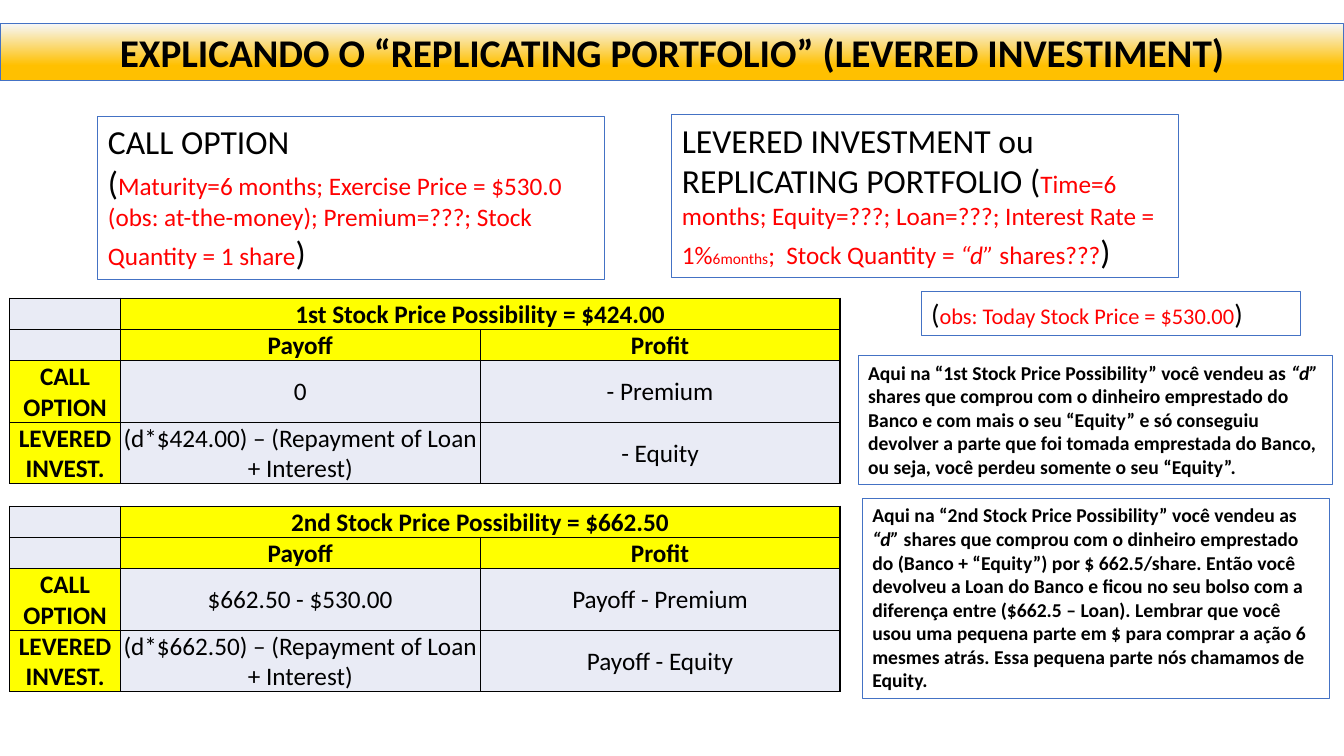
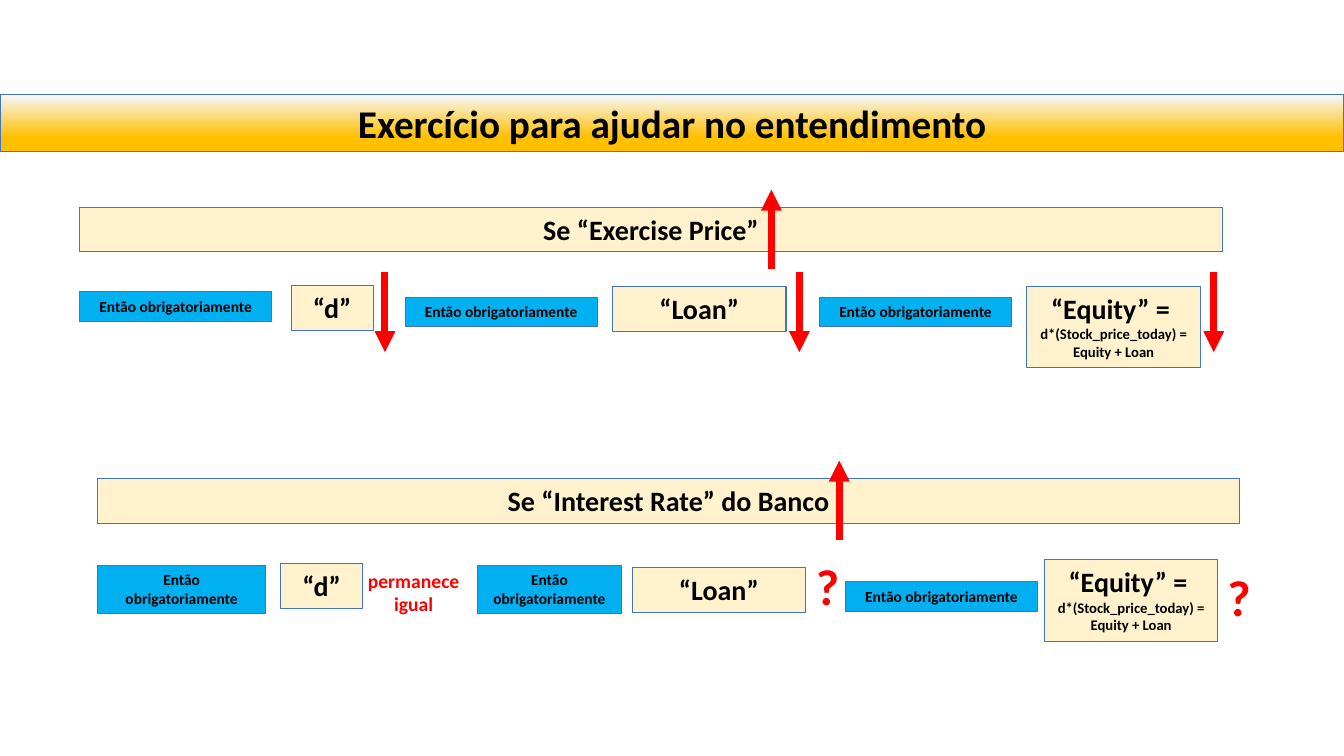
from lxml.etree import SubElement
from pptx import Presentation
from pptx.dml.color import RGBColor
from pptx.enum.shapes import MSO_CONNECTOR
from pptx.enum.text import MSO_ANCHOR, MSO_AUTO_SIZE, PP_ALIGN
from pptx.oxml import parse_xml
from pptx.oxml.ns import nsdecls, qn
from pptx.util import Pt

HEX = {
    "black": "000000",
    "red": "FF0000",
    "outline": "4472C4",
    "gold": "FFC000",
    "pale": "F6F8FC",
    "cream": "FFF2CC",
    "sky": "00B0F0",
    "yellow": "FFFF00",
    "cell": "E9EBF5",
}
COLORS = {name: RGBColor.from_string(value) for name, value in HEX.items()}
FONT = "Calibri"

deck = Presentation()
deck.slide_width, deck.slide_height = Pt(960), Pt(540)


def add_titled_page(title, top):
    page = deck.slides.add_slide(deck.slide_layouts[5])
    band = page.shapes.title
    band.left, band.top, band.width, band.height = Pt(0), Pt(top), Pt(960), Pt(41)
    band.fill.gradient()
    band.fill.gradient_angle = 270
    for stop, position, color in zip(band.fill.gradient_stops, (0, 0.74), ("pale", "gold")):
        stop.position = position
        stop.color.rgb = COLORS[color]
    band.line.color.rgb = COLORS["outline"]
    band.line.width = Pt(0.75)
    frame = band.text_frame
    frame.text = title
    frame.auto_size = MSO_AUTO_SIZE.NONE
    frame.vertical_anchor = MSO_ANCHOR.MIDDLE
    para = frame.paragraphs[0]
    para.alignment = PP_ALIGN.CENTER
    para.font.name, para.font.size, para.font.bold = FONT, Pt(28), True
    para.font.color.rgb = COLORS["black"]
    return page


def add_box(page, place, paragraphs, fill=None, outlined=True, bold=False, align=PP_ALIGN.LEFT):
    box = page.shapes.add_textbox(*[Pt(value) for value in place])
    if fill:
        box.fill.solid()
        box.fill.fore_color.rgb = COLORS[fill]
    if outlined:
        box.line.color.rgb = COLORS["outline"]
        box.line.width = Pt(0.75)
    frame = box.text_frame
    frame.word_wrap = True
    for index, spans in enumerate(paragraphs):
        para = frame.add_paragraph() if index else frame.paragraphs[0]
        para.alignment = align
        para.font.name, para.font.bold = FONT, bold
        for text, size, color, *italic in spans:
            span = para.add_run()
            span.text = text
            span.font.size = Pt(size)
            span.font.color.rgb = COLORS[color]
            if italic:
                span.font.italic = True


page = add_titled_page("EXPLICANDO O “REPLICATING PORTFOLIO” (LEVERED INVESTIMENT)", 16.5)

add_box(page, (70, 83, 362, 116.5), [
    [("CALL OPTION", 24, "black")],
    [
        ("(", 24, "black"),
        ("Maturity=6 months; Exercise Price = $530.0 (obs: at-the-money); "
         "Premium=???; Stock Quantity = 1 share", 18, "red"),
        (")", 24, "black"),
    ],
])
add_box(page, (480, 82, 362, 116.5), [[
    ("LEVERED INVESTMENT ou REPLICATING PORTFOLIO (", 24, "black"),
    ("Time=6 months; Equity=???; Loan=???; Interest Rate = 1%", 18, "red"),
    ("6months", 11, "red"),
    (";  Stock Quantity = ", 18, "red"),
    ("“d” ", 18, "red", "italic"),
    ("shares???", 18, "red"),
    (")", 24, "black"),
]])
add_box(page, (658, 208, 271, 31.5), [[
    ("(", 20, "black"),
    ("obs: Today Stock Price = $530.00", 16, "red"),
    (")", 20, "black"),
]])

notes = [
    ((613, 254, 339, 92), "1st",
     "shares que comprou com o dinheiro emprestado do Banco e com mais o seu “Equity” e só "
     "conseguiu devolver a parte que foi tomada emprestada do Banco, ou seja, você perdeu "
     "somente o seu “Equity”."),
    ((616, 356, 333.5, 143), "2nd",
     "shares que comprou com o dinheiro emprestado do (Banco + “Equity”) por $ 662.5/share. "
     "Então você devolveu a Loan do Banco e ficou no seu bolso com a diferença entre "
     "($662.5 – Loan). Lembrar que você usou uma pequena parte em $ para comprar a ação 6 "
     "mesmes atrás. Essa pequena parte nós chamamos de Equity."),
]
for place, ordinal, ending in notes:
    add_box(page, place, [[
        (f"Aqui na “{ordinal} Stock Price Possibility” você vendeu as ", 14, "black"),
        ("“d” ", 14, "black", "italic"),
        (ending, 14, "black"),
    ]], bold=True)

possibilities = [
    (213, "1st", "$424.00", "0", "- Premium", "- Equity"),
    (361.5, "2nd", "$662.50", "$662.50 - $530.00", "Payoff - Premium", "Payoff - Equity"),
]
for top, ordinal, price, call_payoff, call_profit, levered_profit in possibilities:
    rows = [
        ["", f"{ordinal} Stock Price Possibility = {price}", ""],
        ["", "Payoff", "Profit"],
        ["CALL OPTION", call_payoff, call_profit],
        ["LEVERED INVEST.", f"(d*{price}) – (Repayment of Loan + Interest)", levered_profit],
    ]
    table = page.shapes.add_table(4, 3, Pt(7), Pt(top), Pt(593), Pt(132)).table
    table.first_row = table.horz_banding = False
    for column, width in zip(table.columns, (79, 257, 257)):
        column.width = Pt(width)
    for row, height in zip(table.rows, (22, 22, 44, 44)):
        row.height = Pt(height)
    table.cell(0, 1).merge(table.cell(0, 2))
    for row_index, texts in enumerate(rows):
        for column_index, text in enumerate(texts):
            cell = table.cell(row_index, column_index)
            heading = (row_index < 2) != (column_index == 0)
            cell.margin_left = cell.margin_right = cell.margin_top = Pt(0.7)
            cell.margin_bottom = Pt(0)
            cell.vertical_anchor = MSO_ANCHOR.MIDDLE
            properties = cell._tc.get_or_add_tcPr()
            for side in ("lnL", "lnR", "lnT", "lnB"):
                properties.append(parse_xml(
                    f'<a:{side} {nsdecls("a")} w="{Pt(1)}"><a:solidFill>'
                    f'<a:srgbClr val="{HEX["black"]}"/></a:solidFill></a:{side}>'))
            cell.fill.solid()
            cell.fill.fore_color.rgb = COLORS["yellow" if heading else "cell"]
            para = cell.text_frame.paragraphs[0]
            para.alignment = PP_ALIGN.CENTER
            para.font.name, para.font.size, para.font.bold = FONT, Pt(18), heading
            para.font.color.rgb = COLORS["black"]
            if text:
                para.add_run().text = text

page = add_titled_page("Exercício para ajudar no entendimento", 67.5)

therefore = [[("Então obrigatoriamente", 11, "black")]]
delta = [[("“d”", 20, "black")]]
loan = [[("“Loan”", 20, "black")]]
equity = [
    [("“Equity” = ", 20, "black")],
    [("d*(Stock_price_today) = Equity + Loan", 10.5, "black")],
]
unknown = [[("?", 36, "red")]]
exercise_price = [[("Se “Exercise Price”", 20, "black")]]
interest_rate = [[("Se “Interest Rate” do Banco", 20, "black")]]
unchanged = [[("permanece igual", 14, "red")]]

steps = [
    (exercise_price, "cream", (57, 148, 816, 32)),
    (therefore, "sky", (57, 208.5, 137, 21)),
    (delta, "cream", (208, 204, 58.5, 32)),
    (therefore, "sky", (289.5, 212.5, 137, 21)),
    (loan, "cream", (437.5, 204.5, 124, 32)),
    (therefore, "sky", (585.5, 212.5, 137, 21)),
    (equity, "cream", (733.5, 204.5, 124, 58)),
    (interest_rate, "cream", (69.5, 342, 816, 32)),
    (therefore, "sky", (69.5, 404, 120.5, 34)),
    (delta, "cream", (200.5, 402.5, 58.5, 32)),
    (unchanged, None, (244, 402.5, 103, 41)),
    (therefore, "sky", (341, 404, 103, 34)),
    (loan, "cream", (451.5, 405.5, 124, 32)),
    (unknown, None, (575, 393, 32, 51)),
    (therefore, "sky", (604, 415.5, 137, 21)),
    (equity, "cream", (746, 400, 124, 58)),
    (unknown, None, (869, 400.5, 32, 51)),
]
for paragraphs, fill, place in steps:
    add_box(page, place, paragraphs, fill, fill is not None, True, PP_ALIGN.CENTER)

arrows = [
    (551, 192, 135.5),
    (275, 194.5, 251.5),
    (571, 194.5, 251.5),
    (867, 194.5, 251.5),
    (599.5, 386, 329),
]
for x, start, end in arrows:
    arrow = page.shapes.add_connector(MSO_CONNECTOR.STRAIGHT, Pt(x), Pt(start), Pt(x), Pt(end))
    arrow.line.color.rgb = COLORS["red"]
    arrow.line.width = Pt(5)
    SubElement(arrow.line._get_or_add_ln(), qn("a:tailEnd"), type="triangle")
    SubElement(arrow._element.spPr, qn("a:effectLst"))

deck.save("out.pptx")
